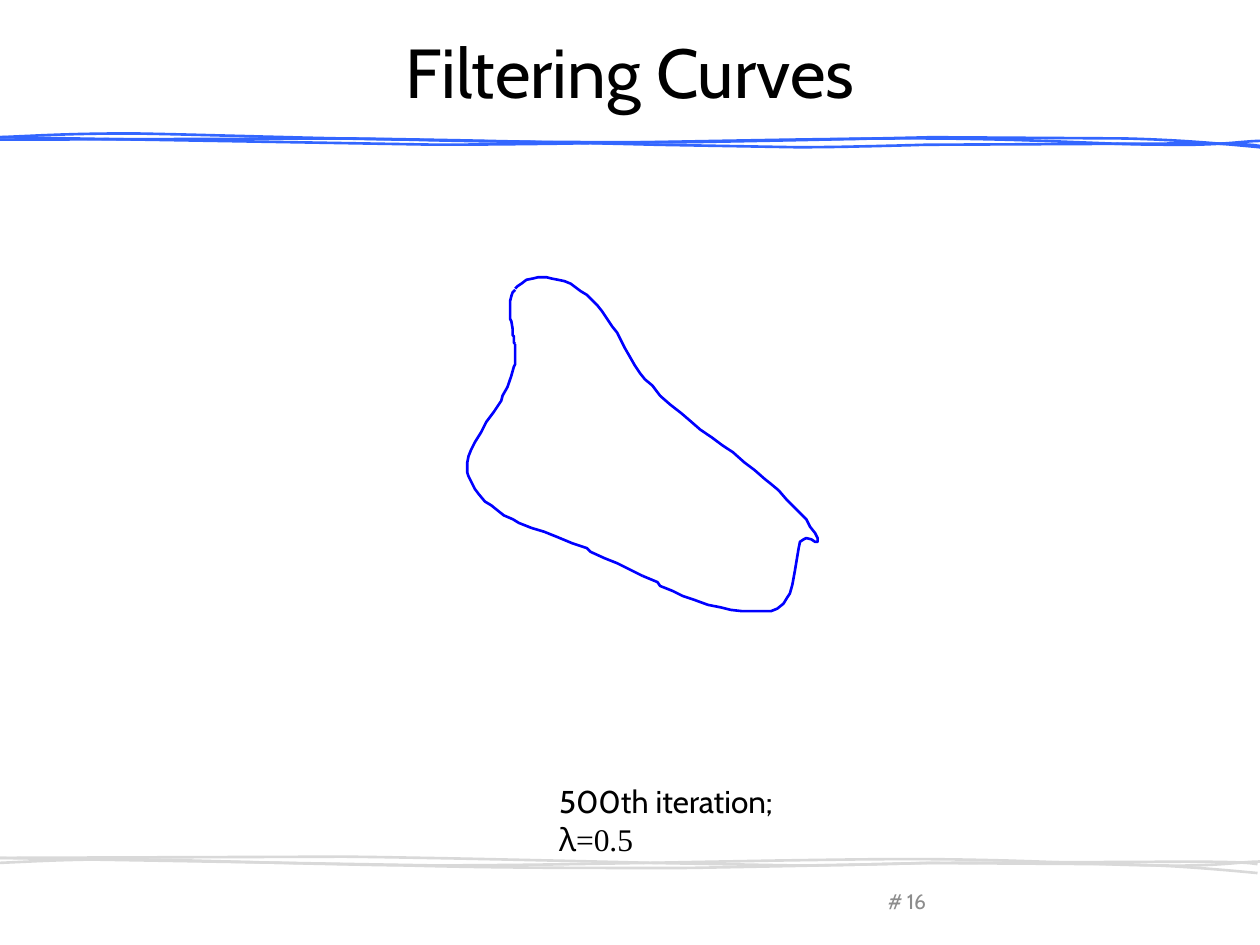
import pptx
import pptx.dml.color
import pptx.enum.text
import pptx.util

UNIT = pptx.util.Cm(0.0254)
CURVE_STEPS = 16

RULE_STROKES = [
    [[(-1, 3)], [(344, 9)], [(465, 9), (627, 4), (723, 4)],
     [(819, 4), (876, 9), (922, 9)], [(968, 10), (987, 6), (1000, 6)],
     [(1013, 5), (1006, 6), (999, 6)]],
    [[(-1, 3)], [(26, 2), (52, 0), (106, 0)], [(161, 1), (252, 4), (325, 5)],
     [(397, 7), (474, 7), (543, 7)], [(612, 6), (740, 3), (740, 3)],
     [(892, 4)], [(935, 5), (968, 8), (1000, 11)]],
    [[(-2, 5)], [(275, 4)], [(362, 5), (520, 9), (520, 9)], [(634, 11)],
     [(670, 11), (735, 9), (735, 9)], [(943, 8)],
     [(987, 8), (994, 9), (1000, 10)]],
]

CURVE_STROKES = [
    [(38, 9), (40, 7), (43, 5), (47, 2), (52, 1), (56, 0), (63, 0), (67, 1),
     (72, 2), (77, 3), (82, 5), (86, 8), (90, 11), (95, 14), (99, 18),
     (103, 22), (107, 27), (111, 33), (115, 39), (119, 44), (122, 50),
     (125, 56), (129, 63), (133, 70), (137, 76), (141, 81), (147, 86),
     (153, 94), (161, 101), (170, 108), (177, 114), (185, 121), (194, 127),
     (202, 133), (211, 139), (220, 147), (228, 153), (236, 160), (241, 164),
     (247, 169)],
    [(247, 169), (253, 176), (259, 182), (264, 187), (269, 192), (272, 198),
     (276, 203), (278, 207), (278, 210), (276, 210), (273, 208), (269, 207),
     (267, 208), (264, 210), (263, 215), (262, 221), (260, 233), (258, 244),
     (256, 251), (254, 254), (251, 259), (246, 263), (241, 265), (218, 265),
     (209, 264), (201, 262), (191, 260), (180, 256), (171, 253), (163, 249),
     (153, 245), (151, 242), (139, 237)],
    [(139, 237), (131, 233), (119, 227), (109, 223), (98, 218), (95, 215),
     (83, 211), (71, 206), (61, 202), (51, 199), (41, 195), (36, 192),
     (29, 189), (24, 185), (19, 181), (14, 178), (9, 172), (6, 168),
     (3, 162), (1, 158), (0, 155), (0, 147), (1, 142), (3, 137), (6, 131),
     (11, 123), (15, 115), (21, 107), (27, 98), (28, 94), (32, 87),
     (35, 78), (37, 71), (38, 69), (38, 53)],
    [(38, 53), (37, 52), (37, 47), (36, 46), (36, 41), (35, 35), (34, 33),
     (34, 19), (35, 15), (36, 12), (38, 10)],
]


def make_color(value):
    """Return the colour for a hex string."""
    return pptx.dml.color.RGBColor.from_string(value)


def flatten(segments):
    """Turn straight and cubic segments into a list of points."""
    points = [segments[0][0]]
    for segment in segments[1:]:
        if len(segment) == 1:
            points.extend(segment)
            continue
        controls = [points[-1], *segment]
        for step in range(1, CURVE_STEPS + 1):
            t = step / CURVE_STEPS
            weights = ((1 - t) ** 3, 3 * t * (1 - t) ** 2, 3 * t * t * (1 - t), t ** 3)
            points.append(tuple(
                sum(weight * control[axis] for weight, control in zip(weights, controls))
                for axis in (0, 1)))
    return points


def add_stroke(group, left, top, points, color):
    """Draw an open outline relative to the left and top of its box."""
    scaled = [(x * UNIT, y * UNIT) for x, y in points]
    builder = group.shapes.build_freeform(*scaled[0], scale=1.0)
    builder.add_line_segments(scaled[1:], close=False)
    shape = builder.convert_to_shape(left, top)
    shape.shadow.inherit = False
    shape.fill.background()
    shape.line.color.rgb = make_color(color)
    shape.line.width = pptx.util.Pt(1.5)


def add_rule(slide, left, top, color, offsets=(0, 0, 0)):
    """Draw a hand-drawn rule of three strokes across the slide."""
    group = slide.shapes.add_group_shape()
    for segments, offset in zip(RULE_STROKES, offsets):
        add_stroke(group, left, top + offset * UNIT, flatten(segments), color)


def add_curve(slide, left, top):
    """Draw the filtered curve."""
    group = slide.shapes.add_group_shape()
    for points in CURVE_STROKES:
        add_stroke(group, left, top, points, "0000FF")


def write_text(paragraph, text, size=18, font="Cabin", color="000000", align=None):
    """Add one formatted run to a paragraph."""
    run = paragraph.add_run()
    run.text = text
    run.font.size = pptx.util.Pt(size)
    run.font.name = font
    run.font.color.rgb = make_color(color)
    if align is not None:
        paragraph.alignment = align


def add_box(slide, left, top, width, height, anchor=pptx.enum.text.MSO_ANCHOR.TOP):
    """Add a wrapping text box and return its first paragraph."""
    frame = slide.shapes.add_textbox(left, top, width, height).text_frame
    frame.word_wrap = True
    frame.vertical_anchor = anchor
    return frame.paragraphs[0]


def place_title(slide, left, top, width, height):
    """Move and fill the title placeholder."""
    title = slide.shapes.title
    title.left, title.top, title.width, title.height = left, top, width, height
    frame = title.text_frame
    frame.auto_size = pptx.enum.text.MSO_AUTO_SIZE.NONE
    frame.vertical_anchor = pptx.enum.text.MSO_ANCHOR.MIDDLE
    write_text(frame.paragraphs[0], "Filtering Curves", size=39.6,
               align=pptx.enum.text.PP_ALIGN.CENTER)


def add_caption(slide, left, top, width, height):
    """Write the iteration count and the filter weight."""
    paragraph = add_box(slide, left, top, width, height)
    write_text(paragraph, "500th iteration; λ")
    write_text(paragraph, "=0.5", font="Times New Roman")


def add_page_number(slide, left, top, width, height):
    """Write the number sign and the page number."""
    sign_side = pptx.util.Cm(0.76)
    sign_top = top + (height - sign_side) // 2
    for text, box in (("#", (left, sign_top, sign_side, sign_side)),
                      ("16", (left, top, width, height))):
        paragraph = add_box(slide, *box, anchor=pptx.enum.text.MSO_ANCHOR.MIDDLE)
        write_text(paragraph, text, size=12, color="8C8C8C",
                   align=pptx.enum.text.PP_ALIGN.CENTER)


def main():
    """Build the slide and save it."""
    cm = pptx.util.Cm
    presentation = pptx.Presentation()
    presentation.slide_width, presentation.slide_height = cm(25.4), cm(19.05)
    slide = presentation.slides.add_slide(presentation.slide_layouts[5])
    add_rule(slide, cm(0), cm(2.69), "3366FF")
    add_rule(slide, cm(-0.05), cm(17.27), "D9D9D9", offsets=(-2, 2, -4))
    add_caption(slide, cm(11.02), cm(15.65), cm(6.25), cm(1.02))
    add_curve(slide, cm(9.42), cm(5.59))
    place_title(slide, cm(1.27), cm(0.76), cm(22.86), cm(1.35))
    add_page_number(slide, cm(17.65), cm(17.65), cm(1.65), cm(1.02))
    presentation.save("out.pptx")


if __name__ == "__main__":
    main()
